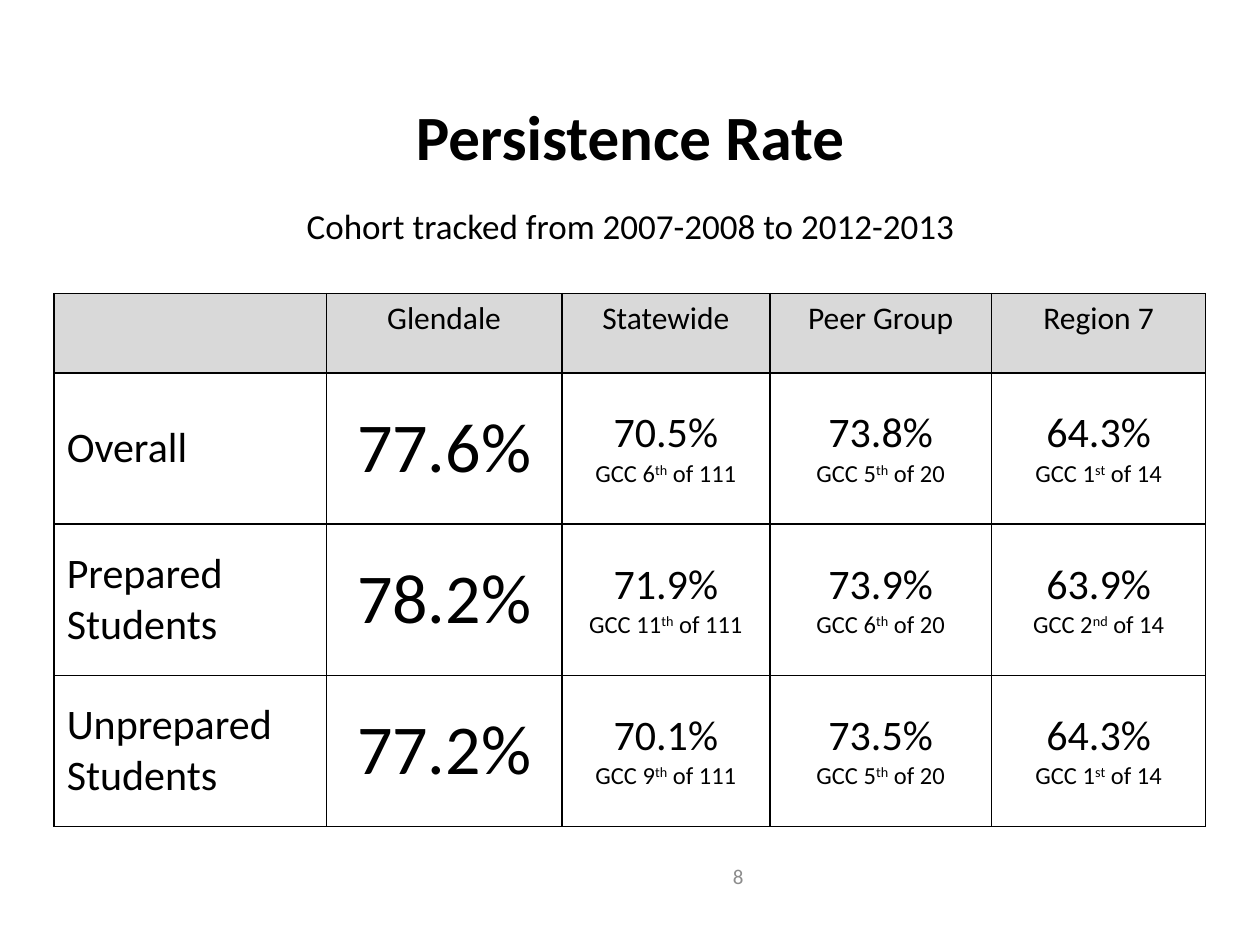
from lxml import etree
from pptx import Presentation
from pptx.dml.color import RGBColor
from pptx.enum.text import MSO_ANCHOR, MSO_AUTO_SIZE, PP_ALIGN
from pptx.oxml.ns import qn
from pptx.util import Inches, Pt

LEFT, CENTER, RIGHT = PP_ALIGN.LEFT, PP_ALIGN.CENTER, PP_ALIGN.RIGHT
TOP, MIDDLE = MSO_ANCHOR.TOP, MSO_ANCHOR.MIDDLE
GROW = MSO_AUTO_SIZE.SHAPE_TO_FIT_TEXT
FONT, BLACK, GRAY, SHADE = "Calibri", "000000", "8C8C8C", "D9D9D9"

COLS = [2.16, 1.87, 1.65, 1.76, 1.7]
ROWS = [0.63, 1.2, 1.2, 1.2]
HEADS = ["", "Glendale", "Statewide", "Peer Group", "Region 7"]
TOTALS = [111, 20, 14]
RATES = [
    ("Overall", "77.6%", [("70.5%", "6th"), ("73.8%", "5th"), ("64.3%", "1st")]),
    ("Prepared\nStudents", "78.2%",
     [("71.9%", "11th"), ("73.9%", "6th"), ("63.9%", "2nd")]),
    ("Unprepared\nStudents", "77.2%",
     [("70.1%", "9th"), ("73.5%", "5th"), ("64.3%", "1st")]),
]


def color(code):
    return RGBColor.from_string(code)


def style(run, size, code=BLACK, bold=False):
    font = run.font
    font.name, font.size, font.bold = FONT, Pt(size), bold
    font.color.rgb = color(code)


def write(frame, text, size, align, code=BLACK, bold=False):
    frame.text = text
    for para in frame.paragraphs:
        para.alignment = align
        for run in para.runs:
            style(run, size, code, bold)


def place(shape, left, top, width, height):
    shape.left, shape.top = Inches(left), Inches(top)
    shape.width, shape.height = Inches(width), Inches(height)


def add_title(slide, text):
    title = slide.shapes.title
    place(title, 2.94, 0.72, 4.12, 0.71)
    frame = title.text_frame
    write(frame, text, 36, CENTER, bold=True)
    frame.word_wrap = False
    frame.auto_size = GROW
    frame.vertical_anchor = TOP


def add_text(slide, box, text, size, align, code=BLACK):
    shape = slide.shapes.add_textbox(*map(Inches, box))
    frame = shape.text_frame
    frame.word_wrap = True
    write(frame, text, size, align, code)
    return frame


def add_rank(frame, rank, total):
    para = frame.add_paragraph()
    para.alignment = CENTER
    for text, raised in ((f"GCC {rank[:-2]}", False), (rank[-2:], True),
                         (f" of {total}", False)):
        run = para.add_run()
        run.text = text
        style(run, 14)
        if raised:
            run.font._element.set("baseline", "30000")


def add_edges(cell):
    props = cell._tc.get_or_add_tcPr()
    for side in ("a:lnL", "a:lnR", "a:lnT", "a:lnB"):
        line = etree.SubElement(props, qn(side), w=str(Pt(1)))
        fill = etree.SubElement(line, qn("a:solidFill"))
        etree.SubElement(fill, qn("a:srgbClr"), val=BLACK)


def set_cell(cell, text, size, align, anchor=MIDDLE, shade=None):
    add_edges(cell)
    cell.vertical_anchor = anchor
    if shade:
        cell.fill.solid()
        cell.fill.fore_color.rgb = color(shade)
    else:
        cell.fill.background()
    write(cell.text_frame, text, size, align)


def add_rates(slide):
    box = map(Inches, (0.43, 2.33, sum(COLS), sum(ROWS)))
    table = slide.shapes.add_table(len(ROWS), len(COLS), *box).table
    table.first_row = table.horz_banding = False
    for col, width in zip(table.columns, COLS):
        col.width = Inches(width)
    for row, height in zip(table.rows, ROWS):
        row.height = Inches(height)
    for col, head in enumerate(HEADS):
        set_cell(table.cell(0, col), head, 18, CENTER, TOP, SHADE)
    for row, (label, rate, peers) in enumerate(RATES, 1):
        set_cell(table.cell(row, 0), label, 24, LEFT)
        set_cell(table.cell(row, 1), rate, 40, CENTER)
        for col, ((peer, rank), total) in enumerate(zip(peers, TOTALS), 2):
            cell = table.cell(row, col)
            set_cell(cell, peer, 24, CENTER)
            add_rank(cell.text_frame, rank, total)


def main():
    deck = Presentation()
    deck.slide_width, deck.slide_height = Inches(10), Inches(7.5)
    slide = deck.slides.add_slide(deck.slide_layouts[5])
    add_title(slide, "Persistence Rate")
    page = add_text(slide, (4, 6.75, 2, 0.4), "8", 12, RIGHT, GRAY)
    page.vertical_anchor = MIDDLE
    note = add_text(slide, (1.03, 1.57, 7.95, 0.44),
                    "Cohort tracked from 2007-2008 to 2012-2013", 20, CENTER)
    note.auto_size = GROW
    note.paragraphs[0].space_after = Pt(24)
    add_rates(slide)
    deck.save("out.pptx")


if __name__ == "__main__":
    main()
